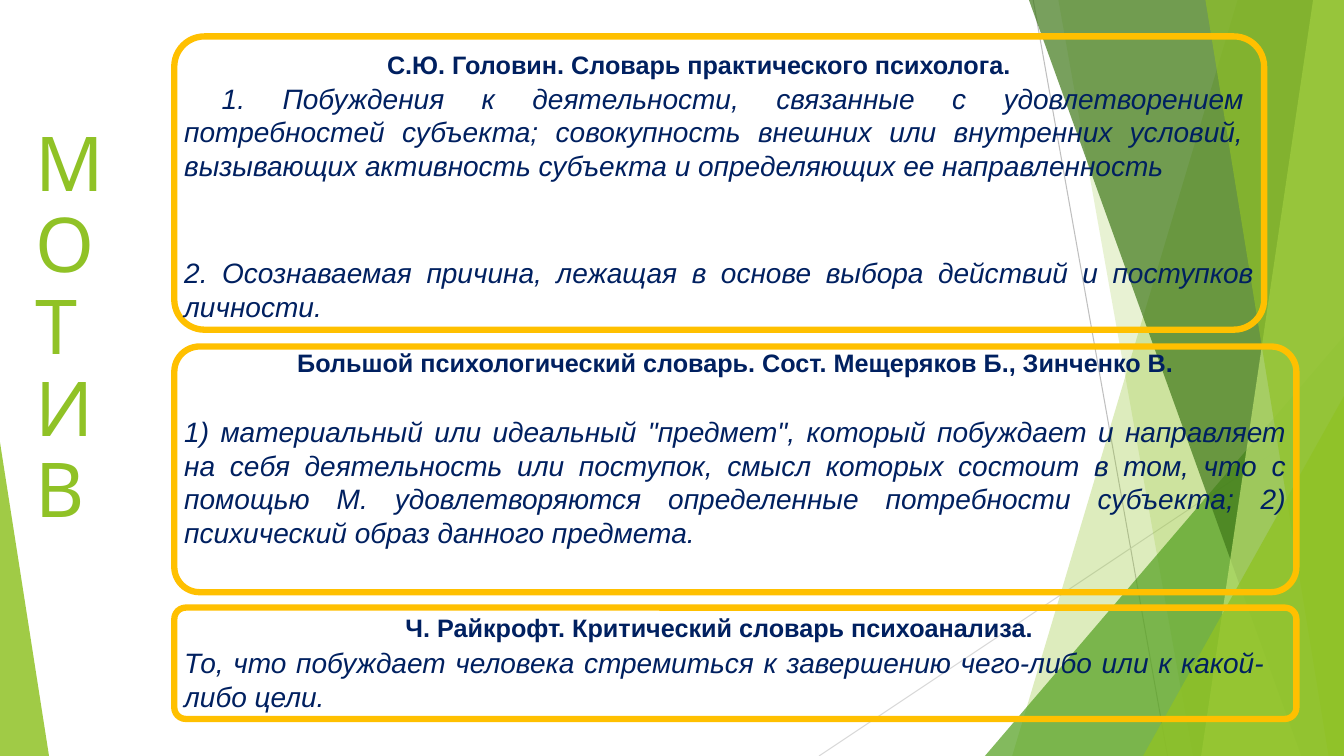
from dataclasses import dataclass

from lxml import etree
from pptx import Presentation
from pptx.dml.color import RGBColor
from pptx.enum.shapes import MSO_CONNECTOR, MSO_SHAPE
from pptx.enum.text import MSO_ANCHOR, PP_ALIGN
from pptx.oxml.ns import qn
from pptx.util import Pt

STRAIGHT = MSO_CONNECTOR.STRAIGHT
TRIANGLE, ROUNDED = MSO_SHAPE.ISOSCELES_TRIANGLE, MSO_SHAPE.ROUNDED_RECTANGLE
LEFT, CENTER, JUSTIFY = PP_ALIGN.LEFT, PP_ALIGN.CENTER, PP_ALIGN.JUSTIFY
TOP = MSO_ANCHOR.TOP
WIDTH, HEIGHT = 960, 540


@dataclass(frozen=True)
class Theme:
    green: str = "90C226"
    leaf: str = "54A021"
    forest: str = "3F7819"
    lime: str = "C0E474"
    navy: str = "002060"
    amber: str = "FFC000"
    gray: str = "BFBFBF"
    light_gray: str = "D9D9D9"
    title_font: str = "Karla"
    body_font: str = "Arial"
    title_size: int = 54
    heading_size: int = 18
    body_size: int = 20
    frame_line: float = 4.5
    thin_line: float = 0.75


class SlideBuilder:
    def __init__(self, slide, theme):
        self.shapes = slide.shapes
        self.theme = theme

    def line(self, x1, y1, x2, y2, color):
        s = self.shapes.add_connector(STRAIGHT, Pt(x1), Pt(y1), Pt(x2), Pt(y2))
        s.line.color.rgb = RGBColor.from_string(color)
        s.line.width = Pt(self.theme.thin_line)
        etree.SubElement(s._element.spPr, qn("a:effectLst"))

    def tint(self, s, color, opacity):
        s.shadow.inherit = False
        s.line.fill.background()
        s.fill.solid()
        s.fill.fore_color.rgb = RGBColor.from_string(color)
        clr = s._element.spPr.find(qn("a:solidFill"))[0]
        etree.SubElement(clr, qn("a:alpha"), val=str(opacity * 1000))

    def band(self, top_x, bottom_x, color, opacity):
        """Full-height facet that reaches the right edge of the slide."""
        builder = self.shapes.build_freeform(Pt(top_x), 0)
        corners = [(WIDTH, 0), (WIDTH, HEIGHT), (bottom_x, HEIGHT)]
        builder.add_line_segments([(Pt(x), Pt(y)) for x, y in corners])
        self.tint(builder.convert_to_shape(), color, opacity)

    def triangle(self, x, y, w, apex, color, opacity):
        """Right triangle standing on the bottom edge."""
        s = self.shapes.add_shape(TRIANGLE, Pt(x), Pt(y), Pt(w), Pt(HEIGHT - y))
        s.adjustments[0] = apex
        self.tint(s, color, opacity)

    def frame(self, x, y, w, h):
        s = self.shapes.add_shape(ROUNDED, Pt(x), Pt(y), Pt(w), Pt(h))
        s.adjustments[0] = 0.103
        s.shadow.inherit = False
        s.fill.background()
        s.line.color.rgb = RGBColor.from_string(self.theme.amber)
        s.line.width = Pt(self.theme.frame_line)

    def text_box(self, x, y, w, h, lines, align, font, size, color,
                 bold=False, italic=False, spacing=1.0):
        tf = self.shapes.add_textbox(Pt(x), Pt(y), Pt(w), Pt(h)).text_frame
        tf.word_wrap = True
        tf.vertical_anchor = TOP
        p = tf.paragraphs[0]
        p.alignment = align
        p.line_spacing = spacing
        for i, line in enumerate(lines):
            if i:
                p.add_line_break()
            r = p.add_run()
            r.text = line
            r.font.name, r.font.size = font, Pt(size)
            r.font.bold, r.font.italic = bold, italic
            r.font.color.rgb = RGBColor.from_string(color)

    def title(self, x, y, w, h, word):
        t = self.theme
        self.text_box(x, y, w, h, word, LEFT, t.title_font, t.title_size,
                      t.green, spacing=0.9)

    def heading(self, x, y, w, text):
        t = self.theme
        self.text_box(x, y, w, 29, [text], CENTER, t.body_font,
                      t.heading_size, t.navy, bold=True)

    def definition(self, x, y, w, h, text):
        t = self.theme
        self.text_box(x, y, w, h, [text], JUSTIFY, t.body_font,
                      t.body_size, t.navy, italic=True)


def main():
    prs = Presentation()
    prs.slide_width, prs.slide_height = Pt(WIDTH), Pt(HEIGHT)
    theme = Theme()
    page = SlideBuilder(prs.slides.add_slide(prs.slide_layouts[6]), theme)

    # Faceted background
    page.line(738, 0, 834, HEIGHT, theme.gray)
    page.line(WIDTH, 290, 585, HEIGHT, theme.light_gray)
    page.band(884, 723, theme.green, 30)
    page.band(756, 852, theme.green, 20)
    page.triangle(703.5, 240, 256.5, 1, theme.leaf, 72)
    page.band(735, 929.5, theme.forest, 70)
    page.band(938, 858, theme.lime, 70)
    page.band(861, 949, theme.green, 65)
    page.triangle(816.5, 283, 143.5, 1, theme.green, 80)
    page.triangle(0, 316, 35, 0, theme.green, 85)

    # Vertical title, one letter per line
    page.title(18, 86.5, 107, 260.5, "МОТИВ")

    # Dictionary entries: frame (y, w, h), heading (x, y, w, text),
    # definitions (y, w, h, text)
    left = 124.5
    entries = [
        ((26, 778.5, 209.5),
         (132.5, 31.5, 733.5, "С.Ю. Головин. Словарь практического психолога."),
         [(54.5, 771, 80,
           " 1. Побуждения к деятельности, связанные с удовлетворением "
           "потребностей субъекта; совокупность внешних или внутренних "
           "условий, вызывающих активность субъекта и определяющих ее "
           "направленность"),
          (179, 778.5, 55.5,
           "2. Осознаваемая причина, лежащая в основе выбора действий и "
           "поступков личности.")]),
        ((247.5, 801.5, 175.5),
         (left, 244.5, 801.5,
          "Большой психологический словарь. Сост. Мещеряков Б., Зинченко В."),
         [(292.5, 801.5, 104.5,
           "1) материальный или идеальный \"предмет\", который побуждает и "
           "направляет на себя деятельность или поступок, смысл которых "
           "состоит в том, что с помощью М. удовлетворяются определенные "
           "потребности субъекта; 2) психический образ данного предмета.")]),
        ((434, 801.5, 79.5),
         (left, 434, 778.5, "Ч. Райкрофт. Критический словарь психоанализа."),
         [(457.5, 786, 55.5,
           "То, что побуждает человека стремиться к завершению чего-либо "
           "или к какой-либо цели.")]),
    ]
    for frame, heading, definitions in entries:
        page.frame(left, *frame)
        page.heading(*heading)
        for definition in definitions:
            page.definition(left, *definition)

    prs.save("out.pptx")


if __name__ == "__main__":
    main()
